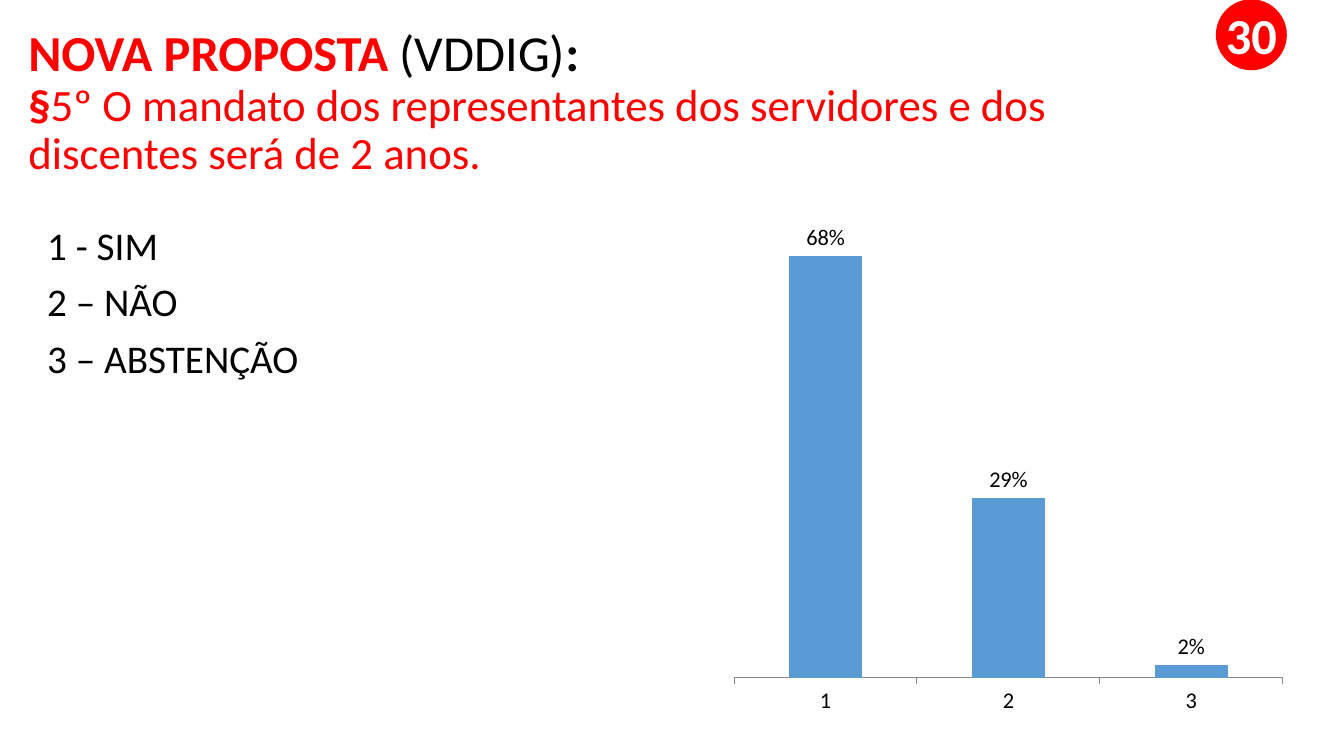
from lxml import etree
from pptx import Presentation
from pptx.chart.data import CategoryChartData
from pptx.dml.color import RGBColor
from pptx.enum.chart import XL_CHART_TYPE as ChartType, XL_LABEL_POSITION as LabelPosition
from pptx.enum.chart import XL_TICK_MARK as TickMark
from pptx.enum.shapes import MSO_SHAPE as ShapeType
from pptx.enum.text import MSO_ANCHOR as Anchor, PP_ALIGN as Align
from pptx.oxml.ns import qn
from pptx.util import Pt

COLORS = {"red": "FF0000", "black": "000000", "white": "FFFFFF", "bar": "5B9BD5", "axis": "868686"}
FONT = "Calibri"
TITLE_LINES = [
    [("NOVA PROPOSTA ", 36, "red", True), ("(VDDIG)", 36, "black", False), (":", 36, "black", True)],
    [("§", 32, "red", True),
     ("5º O mandato dos representantes dos servidores e dos discentes será de 2 anos.", 32, "red", False)],
]
OPTIONS = ["1 - SIM", "2 – NÃO", "3 – ABSTENÇÃO"]
VOTES = {"1": 0.68, "2": 0.29, "3": 0.02}


def color(name):
    return RGBColor.from_string(COLORS[name])


def apply(target, values):
    for name, value in values.items():
        setattr(target, name, value)


def format_font(font, size, color_name, bold=False):
    apply(font, {"name": FONT, "size": Pt(size), "bold": bold})
    font.color.rgb = color(color_name)


def add_run(paragraph, text, size, color_name, bold=False):
    run = paragraph.add_run()
    run.text = text
    format_font(run.font, size, color_name, bold)


def fill_title(title, left, top, width, height):
    apply(title, {"left": Pt(left), "top": Pt(top), "width": Pt(width), "height": Pt(height)})
    apply(title.text_frame, {"vertical_anchor": Anchor.TOP, "margin_top": 0, "margin_bottom": 0,
                             "word_wrap": True})
    paragraph = title.text_frame.paragraphs[0]
    apply(paragraph, {"alignment": Align.LEFT, "line_spacing": 0.9})
    for index, line in enumerate(TITLE_LINES):
        if index:
            paragraph.add_line_break()
        for run in line:
            add_run(paragraph, *run)


def add_options(slide, left, top, width, height):
    frame = slide.shapes.add_textbox(Pt(left), Pt(top), Pt(width), Pt(height)).text_frame
    frame.word_wrap = True
    for index, option in enumerate(OPTIONS):
        paragraph = frame.add_paragraph() if index else frame.paragraphs[0]
        apply(paragraph, {"line_spacing": 0.9, "space_before": Pt(10)})
        add_run(paragraph, option, 28, "black")


def set_plot_area(chart, **fractions):
    """Fix the inner plot area as fractions of the chart."""
    plot_area = chart.plots[0]._element.getparent()
    for old in plot_area.findall(qn("c:layout")):
        plot_area.remove(old)
    layout = etree.Element(qn("c:layout"))
    manual = etree.SubElement(layout, qn("c:manualLayout"))
    settings = {"layoutTarget": "inner", "xMode": "edge", "yMode": "edge", **fractions}
    for name, value in settings.items():
        etree.SubElement(manual, qn(f"c:{name}")).set("val", str(value))
    plot_area.insert(0, layout)


def add_vote_chart(slide, left, top, width, height):
    data = CategoryChartData(number_format="0%")
    data.categories = list(VOTES)
    data.add_series("Series 1", list(VOTES.values()))
    chart = slide.shapes.add_chart(ChartType.COLUMN_CLUSTERED, Pt(left), Pt(top),
                                   Pt(width), Pt(height), data).chart
    apply(chart, {"has_legend": False, "has_title": False})
    format_font(chart.font, 16, "black")
    set_plot_area(chart, x=0.02, y=0.02, w=0.96, h=0.89)

    # Axes
    apply(chart.value_axis, {"visible": False, "has_major_gridlines": False,
                             "minimum_scale": 0, "maximum_scale": 0.8})
    chart.value_axis.tick_labels.number_format = "0%"
    chart.value_axis.tick_labels.number_format_is_linked = False
    chart.category_axis.major_tick_mark = TickMark.OUTSIDE
    apply(chart.category_axis.format.line, {"width": Pt(0.75)})
    chart.category_axis.format.line.color.rgb = color("axis")

    # Bars and labels
    plot = chart.plots[0]
    apply(plot, {"gap_width": 150, "vary_by_categories": False, "has_data_labels": True})
    apply(plot.data_labels, {"show_value": True, "number_format": "0%",
                             "number_format_is_linked": False, "position": LabelPosition.OUTSIDE_END})
    fill = plot.series[0].format.fill
    fill.solid()
    fill.fore_color.rgb = color("bar")


def add_number_badge(slide, text, left, top, size):
    badge = slide.shapes.add_shape(ShapeType.OVAL, Pt(left), Pt(top), Pt(size), Pt(size))
    badge.shadow.inherit = False
    badge.fill.solid()
    badge.fill.fore_color.rgb = color("red")
    badge.line.color.rgb = color("red")
    badge.line.width = Pt(1)
    apply(badge.text_frame, {"margin_left": 0, "margin_right": 0, "margin_top": 0,
                             "margin_bottom": 0, "word_wrap": False,
                             "vertical_anchor": Anchor.MIDDLE})
    paragraph = badge.text_frame.paragraphs[0]
    paragraph.alignment = Align.CENTER
    add_run(paragraph, text, 36, "white", True)


def main():
    presentation = Presentation()
    apply(presentation, {"slide_width": Pt(960), "slide_height": Pt(540)})
    slide = presentation.slides.add_slide(presentation.slide_layouts.get_by_name("Title Only"))
    fill_title(slide.shapes.title, 13, 20, 828, 104.4)
    add_options(slide, 26.6, 158.4, 867.6, 328.3)
    add_vote_chart(slide, 516.2, 121.7, 408.2, 398.2)
    add_number_badge(slide, "30", 869, 0, 49.7)
    presentation.save("out.pptx")


if __name__ == "__main__":
    main()
